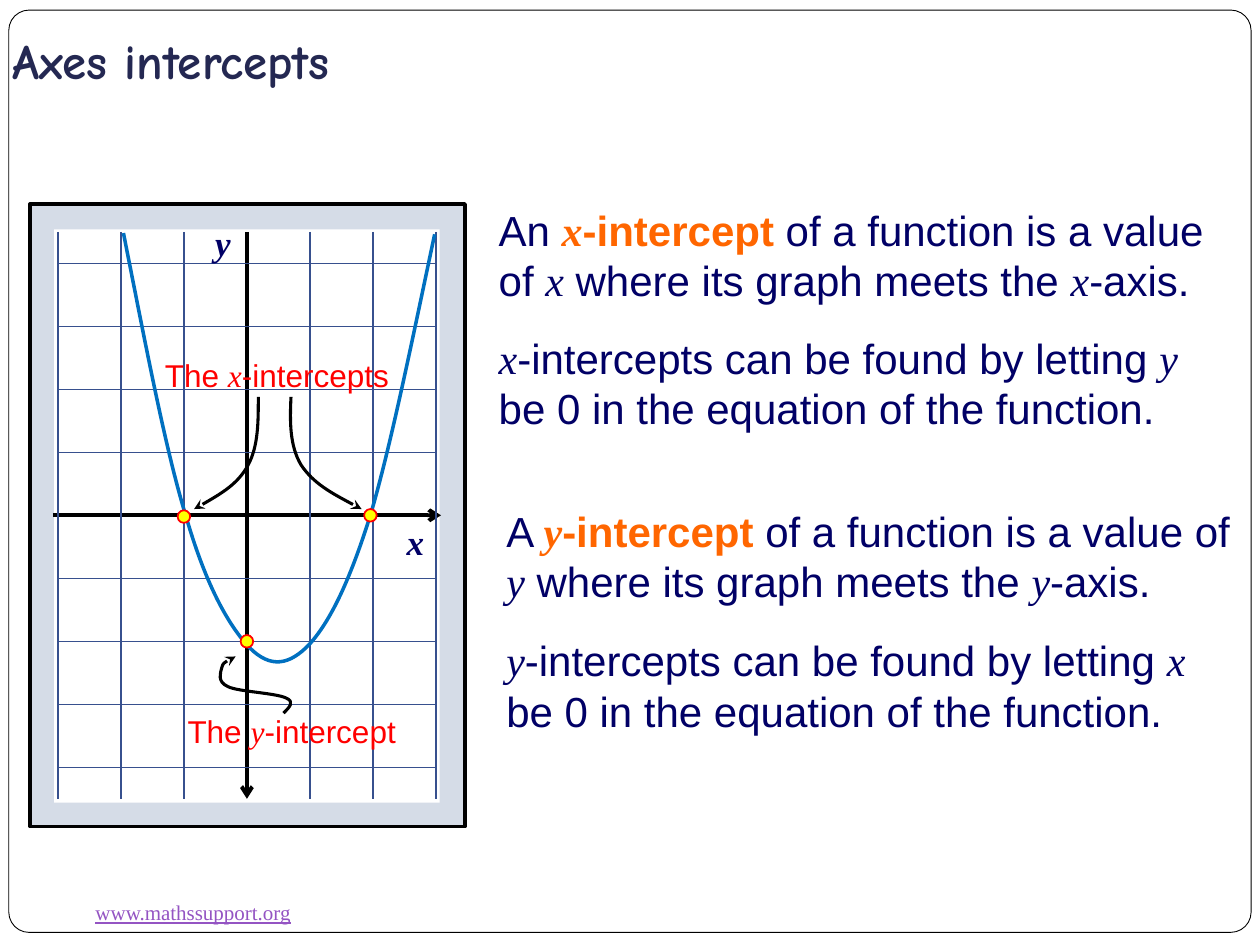
from lxml.etree import SubElement
from pptx import Presentation
from pptx.dml.color import RGBColor
from pptx.enum.shapes import MSO_CONNECTOR, MSO_SHAPE
from pptx.enum.text import MSO_ANCHOR
from pptx.oxml.ns import qn
from pptx.util import Inches, Pt

HUES = {"ink": "010066", "hot": "FF6600", "red": "FF0000", "title": "242852",
        "link": "9454C3", "black": "000000", "white": "FFFFFF", "panel": "D5DCE7",
        "grid": "37508E", "curve": "0070C0", "dot": "FFFF00"}
SERIF = "Times New Roman"

deck = Presentation()
deck.slide_width, deck.slide_height = Inches(10), Inches(7.5)
slide = deck.slides.add_slide(deck.slide_layouts[6])
shapes = slide.shapes


def write(text, box, size=24, hue="ink", face="Arial", bold=False, line=False,
          wrap=True, low=False):
    """Add a text box; *...* marks a bold key term and _..._ a maths variable."""
    frame = shapes.add_textbox(*map(Inches, box)).text_frame
    frame.word_wrap = wrap
    if low:
        frame.vertical_anchor = MSO_ANCHOR.BOTTOM
        frame.margin_bottom = Inches(0.1)
    for i, part in enumerate(text.split("*")):
        for j, bit in enumerate(part.split("_")):
            if not bit:
                continue
            run = frame.paragraphs[0].add_run()
            run.text = bit
            font = run.font
            font.size = Pt(size)
            font.name = SERIF if j % 2 else face
            font.italic = bool(j % 2)
            font.bold = bold or bool(i % 2)
            font.underline = line
            font.color.rgb = RGBColor.from_string(HUES["hot" if i % 2 else hue])


def trim(shape, hue, width, fill=None, tip=None):
    """Set outline, fill and arrowhead, and drop the shadow."""
    if hue:
        shape.line.color.rgb = RGBColor.from_string(HUES[hue])
        shape.line.width = Pt(width)
    else:
        shape.line.fill.background()
    if fill:
        shape.fill.solid()
        shape.fill.fore_color.rgb = RGBColor.from_string(HUES[fill])
    if tip:
        SubElement(shape.line._get_or_add_ln(), qn("a:tailEnd"), type=tip)
    SubElement(shape._element.spPr, qn("a:effectLst"))


# Frame and footer
frame = shapes.add_shape(MSO_SHAPE.ROUNDED_RECTANGLE,
                         *map(Inches, (0.07, 0.08, 9.86, 7.32)))
frame.adjustments[0] = 0.022
trim(frame, "black", 0.5, "white")
write("www.mathssupport.org", (0.66, 7.09, 1.77, 0.3), size=12, hue="link",
      face=SERIF, line=True, wrap=False)

# Graph panel
board = shapes.add_group_shape()
for box, hue, fill in (((0.24, 1.62, 3.45, 4.94), "black", "panel"),
                       ((0.43, 1.82, 3.06, 4.55), None, "white")):
    panel = board.shapes.add_shape(MSO_SHAPE.RECTANGLE, *map(Inches, box))
    trim(panel, hue, 2.25, fill)

# Axes, then the half-inch grid around them
x0, y0, step = 1.96, 4.09, 0.5
lines = [((0.42, y0, 3.5, y0), "black", 2.25, "arrow"),
         ((x0, 1.84, x0, 6.34), "black", 2.25, "arrow")]
for k in (1, 2, 3, -1, -2, -3):
    x = x0 + k * step
    lines.append(((x, 1.84, x, 6.34), "grid", 0.75, None))
for k in (-1, -2, -3, -4, 1, 2, 3, 4):
    y = y0 + k * step
    lines.append(((0.46, y, 3.46, y), "grid", 0.75, None))
for ends, hue, width, tip in lines:
    rule = shapes.add_connector(MSO_CONNECTOR.STRAIGHT, *map(Inches, ends))
    trim(rule, hue, width, tip=tip)

# Graph labels
for name, box in (("_x_", (3.13, 4.08, 0.34, 0.43)),
                  ("_y_", (1.61, 1.71, 0.32, 0.43))):
    write(name, box, size=20, bold=True, wrap=False)
for label, box in (("The _x_-intercepts", (1.21, 2.78, 2.01, 0.4)),
                   ("The _y_-intercept", (1.39, 5.6, 1.87, 0.4))):
    write(label, box, size=18, hue="red", wrap=False)

# Title and definitions
write("Axes intercepts", (0, 0.3, 9, 0.51), size=28, hue="title",
      face="Comic Neue", bold=True, low=True)
for own, other, art, left, top, drop in (("x", "y", "An", 3.86, 1.57, 1.02),
                                         ("y", "x", "A", 3.92, 3.96, 1.03)):
    write(f"{art} *_{own}_-intercept* of a function is a value of _{own}_ "
          f"where its graph meets the _{own}_-axis.", (left, top, 5.96, 0.91))
    write(f"_{own}_-intercepts can be found by letting _{other}_ "
          "be 0 in the equation of the function.", (left, top + drop, 5.96, 0.91))

# Parabola and pointers: a start point, then Bezier triples
curves = [
    ("curve", 2, None, [
        (0.98, 1.85), (1.15, 2.7), (1.31, 3.56), (1.48, 4.11), (1.64, 4.66),
        (1.82, 4.97), (1.98, 5.14), (2.15, 5.31), (2.3, 5.28), (2.46, 5.11),
        (2.62, 4.93), (2.77, 4.63), (2.94, 4.09), (3.1, 3.55), (3.27, 2.71),
        (3.45, 1.86)]),
    ("black", 1.75, "stealth", [
        (2.05, 3.15), (2.05, 3.35), (2.05, 3.54), (1.97, 3.69), (1.89, 3.84),
        (1.72, 3.94), (1.54, 4.04)]),
    ("black", 1.75, "stealth", [
        (2.31, 3.15), (2.3, 3.35), (2.3, 3.54), (2.39, 3.69), (2.49, 3.84),
        (2.68, 3.94), (2.87, 4.04)]),
    ("black", 1.75, "stealth", [
        (2.25, 5.66), (2.3, 5.61), (2.34, 5.57), (2.27, 5.54), (2.19, 5.5),
        (1.89, 5.49), (1.81, 5.45), (1.72, 5.41), (1.75, 5.34), (1.76, 5.3),
        (1.77, 5.26), (1.82, 5.23), (1.87, 5.21)]),
]
for hue, width, tip, knots in curves:
    spots = [tuple(map(Inches, knot)) for knot in knots]
    pen = shapes.build_freeform(*spots[0])
    pen.add_line_segments(spots[1:], close=False)
    curve = pen.convert_to_shape()
    # Turn each three straight segments into one cubic segment
    legs = list(curve._element.iter(qn("a:lnTo")))
    track = legs[0].getparent()
    for n in range(0, len(legs), 3):
        bend = SubElement(track, qn("a:cubicBezTo"))
        for leg in legs[n:n + 3]:
            bend.append(leg[0])
            track.remove(leg)
    curve.fill.background()
    trim(curve, hue, width, tip=tip)

# Intercept points
for x, y in ((1.41, 4.05), (2.89, 4.04), (1.91, 5.04)):
    dot = shapes.add_shape(MSO_SHAPE.OVAL, *map(Inches, (x, y, 0.1, 0.1)))
    trim(dot, "red", 1, "dot")

deck.save("out.pptx")
